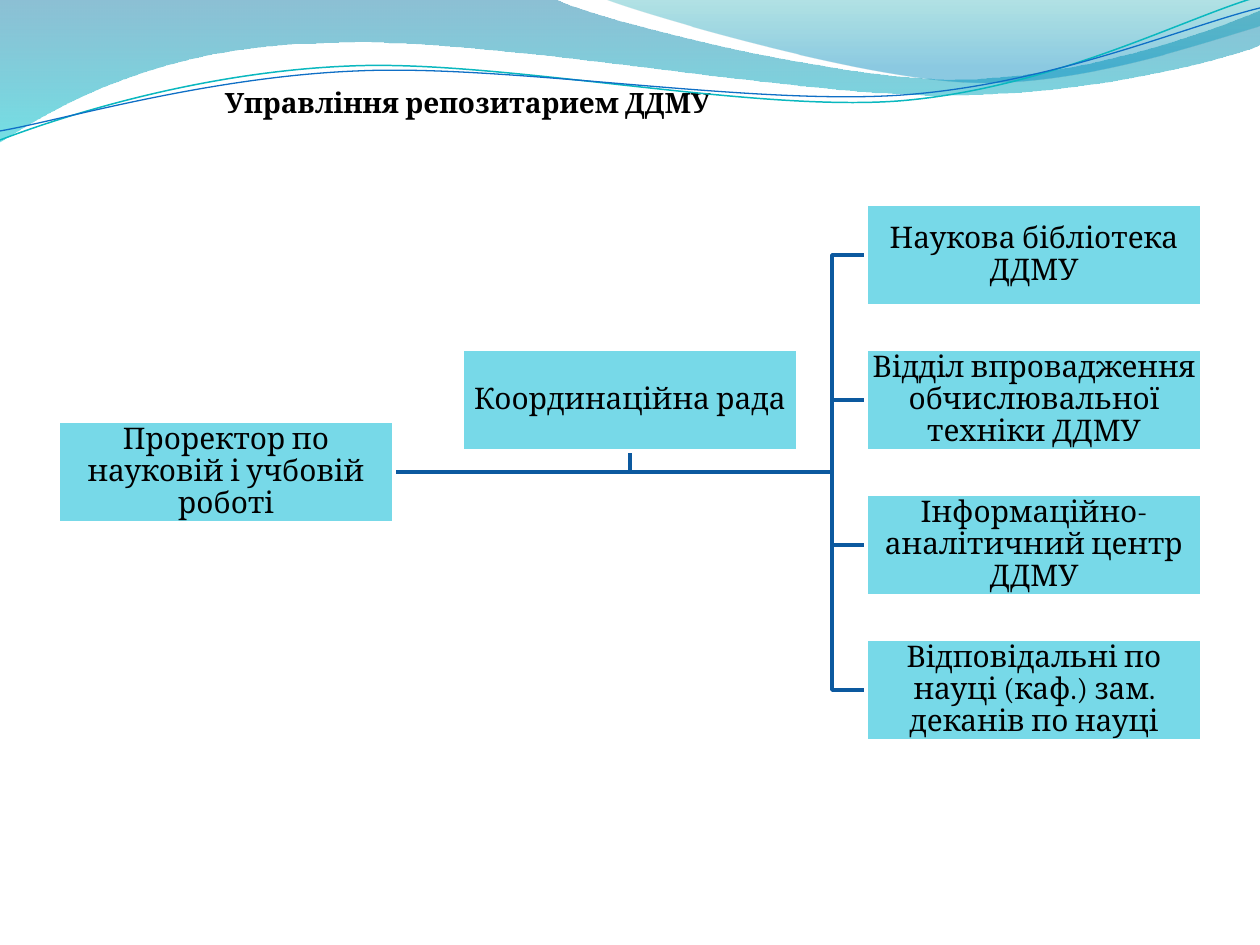
from lxml import etree
from pptx import Presentation
from pptx.dml.color import RGBColor
from pptx.enum.shapes import MSO_SHAPE
from pptx.enum.text import MSO_ANCHOR, MSO_AUTO_SIZE, PP_ALIGN
from pptx.oxml.ns import qn
from pptx.util import Pt

RECTANGLE = MSO_SHAPE.RECTANGLE
MIDDLE = MSO_ANCHOR.MIDDLE
CENTER = PP_ALIGN.CENTER
NO_AUTOFIT = MSO_AUTO_SIZE.NONE

PX = 914400 / 126
FONT = "Cambria"
BLACK = RGBColor(0x00, 0x00, 0x00)
WHITE = RGBColor(0xFF, 0xFF, 0xFF)
BOX_CYAN = RGBColor(0x77, 0xD9, 0xE8)
LINK_BLUE = RGBColor(0x0C, 0x59, 0x9F)
DEEP_BLUE = RGBColor(0x00, 0x74, 0xA1)
TURQUOISE = RGBColor(0x00, 0xC6, 0xCF)
TEAL = RGBColor(0x00, 0xA1, 0xA9)
SKY_BLUE = RGBColor(0x00, 0x8B, 0xBF)
LINE_TEAL = RGBColor(0x0A, 0xB8, 0xBF)
LINE_BLUE = RGBColor(0x0F, 0x6F, 0xC6)

BOX_W, BOX_H = 336, 102
COLUMN_STEP, ROW_STEP = 404, 145

LEFT_WAVE = [(0, 0), (554, -1), (600, 21, 837, 79, 955, 79),
             (1075, 79, 1207, 33, 1260, 11), (1261, 45),
             (1239, 55, 1096, 96, 940, 95), (784, 95, 481, 35, 324, 43),
             (163, 45, 58, 105, -1, 142)]
RIGHT_WAVE = [(604, -1), (641, 14, 859, 78, 969, 82),
              (1079, 87, 1211, 40, 1260, 26), (1260, 0)]
TEAL_CURVE = [(0, 140), (60, 117, 199, 72, 349, 66),
              (498, 59, 747, 112, 898, 101), (1050, 89, 1182, 19, 1257, -3)]
BLUE_CURVE = [(0, 131), (59, 121, 207, 77, 357, 71),
              (508, 64, 752, 106, 903, 95), (1053, 84, 1186, 26, 1260, 8)]

DIRECTOR = "Проректор по науковій і учбовій роботі"
COUNCIL = "Координаційна рада"
DEPARTMENTS = ["Наукова бібліотека ДДМУ",
               "Відділ впровадження обчислювальної техніки ДДМУ",
               "Інформаційно-аналітичний центр ДДМУ",
               "Відповідальні по науці (каф.) зам. деканів по науці"]


def px(length):
    """Turn pixels into EMU."""
    return round(length * PX)


def bend(stroke, controls):
    """Turn a straight path step into a cubic one with two control points."""
    stroke.tag = qn("a:cubicBezTo")
    for position, (x, y) in enumerate(controls):
        control = etree.Element(qn("a:pt"), x=str(x), y=str(y))
        stroke.insert(position, control)


def add_outline(slide, left, top, segments, close):
    """Draw straight (x, y) and cubic (six-number) segments as a freeform."""
    start, *rest = [(px(left + segment[-2]), px(top + segment[-1]))
                    for segment in segments]
    builder = slide.shapes.build_freeform(*start)
    builder.add_line_segments(rest, close=close)
    outline = builder.convert_to_shape()
    outline.shadow.inherit = False
    strokes = list(outline._element.iter(qn("a:lnTo")))
    for stroke, segment in zip(strokes, segments[1:]):
        if len(segment) == 6:
            x1, y1, x2, y2 = segment[:4]
            controls = [(px(left + x) - outline.left, px(top + y) - outline.top)
                        for x, y in ((x1, y1), (x2, y2))]
            replacement = etree.SubElement(stroke.getparent(),
                                           qn("a:cubicBezTo"))
            stroke.addprevious(replacement)
            replacement.extend(list(stroke))
            bend(replacement, controls)
            stroke.getparent().remove(stroke)
    return outline


def add_path(slide, left, top, segments, color, width):
    """Draw an open, unfilled path."""
    path = add_outline(slide, left, top, segments, False)
    path.fill.background()
    path.line.color.rgb = color
    path.line.width = Pt(width)


def add_wave(slide, left, top, segments, stops):
    """Draw a closed wave with a translucent top-to-bottom gradient."""
    wave = add_outline(slide, left, top, segments, True)
    wave.line.fill.background()
    wave.fill.gradient()
    wave.fill.gradient_angle = 270
    for stop, (position, color, _) in zip(wave.fill.gradient_stops, stops):
        stop.position = position
        stop.color.rgb = color
    colors = wave.fill._xPr.iter(qn("a:srgbClr"))
    for color_node, (_, _, opacity) in zip(colors, stops):
        alpha = etree.SubElement(color_node, qn("a:alpha"))
        alpha.set("val", str(opacity * 1000))


def add_header_waves(slide, left, top):
    """Decorate the top edge with two waves and two thin curves."""
    add_wave(slide, left, top, LEFT_WAVE,
             [(0, DEEP_BLUE, 45), (1, TURQUOISE, 55)])
    add_wave(slide, left, top, RIGHT_WAVE,
             [(0, TEAL, 30), (0.8, SKY_BLUE, 45)])
    add_path(slide, left, top, TEAL_CURVE, LINE_TEAL, 0.85)
    add_path(slide, left, top, BLUE_CURVE, LINE_BLUE, 0.75)


def format_text(frame, text, size, margins):
    """Write centred black text with the given margins."""
    frame.text = text
    frame.word_wrap = True
    frame.auto_size = NO_AUTOFIT
    frame.vertical_anchor = MIDDLE
    (frame.margin_left, frame.margin_top,
     frame.margin_right, frame.margin_bottom) = map(px, margins)
    paragraph = frame.paragraphs[0]
    paragraph.alignment = CENTER
    paragraph.font.name = FONT
    paragraph.font.size = Pt(size)
    paragraph.font.color.rgb = BLACK
    return paragraph


def add_heading(slide, left, top, width, height):
    """Place the slide title."""
    heading = slide.shapes.title
    heading.left, heading.top = px(left), px(top)
    heading.width, heading.height = px(width), px(height)
    paragraph = format_text(heading.text_frame, "Управління репозитарием ДДМУ",
                            16, (32, 21, 13, 38))
    paragraph.font.bold = True


def add_unit(slide, left, top, name):
    """Place one box of the chart."""
    unit = slide.shapes.add_shape(RECTANGLE, px(left), px(top),
                                  px(BOX_W), px(BOX_H))
    unit.shadow.inherit = False
    unit.fill.solid()
    unit.fill.fore_color.rgb = BOX_CYAN
    unit.line.color.rgb = WHITE
    unit.line.width = Pt(2)
    format_text(unit.text_frame, name, 17, (1, 1, 1, 1)).line_spacing = 0.9


def add_organisation(slide, left, top):
    """Build the chart: director, council above the link, departments."""
    department_x = 2 * COLUMN_STEP
    spine_x = department_x - (COLUMN_STEP - BOX_W) // 2
    council_x = COLUMN_STEP + BOX_W // 2
    director_y = ROW_STEP * (len(DEPARTMENTS) - 1) // 2
    link_y = director_y + BOX_H // 2
    rows = [row * ROW_STEP for row in range(len(DEPARTMENTS))]

    links = [[(BOX_W, link_y), (council_x, link_y),
              (council_x, ROW_STEP + BOX_H)]]
    for row_y in reversed(rows):
        middle = row_y + BOX_H // 2
        links.append([(BOX_W, link_y), (spine_x, link_y),
                      (spine_x, middle), (department_x, middle)])
    for link in links:
        add_path(slide, left, top, link, LINK_BLUE, 2)

    add_unit(slide, left, top + director_y, DIRECTOR)
    for row_y, name in zip(rows, DEPARTMENTS):
        add_unit(slide, left + department_x, top + row_y, name)
    add_unit(slide, left + COLUMN_STEP, top + ROW_STEP, COUNCIL)


def main():
    """Build and save the slide."""
    deck = Presentation()
    deck.slide_width, deck.slide_height = px(1260), px(945)
    slide = deck.slides.add_slide(deck.slide_layouts[5])
    add_header_waves(slide, 0, 0)
    add_organisation(slide, 58, 204)
    add_heading(slide, 0, 64, 917, 93)
    deck.save("out.pptx")


if __name__ == "__main__":
    main()
